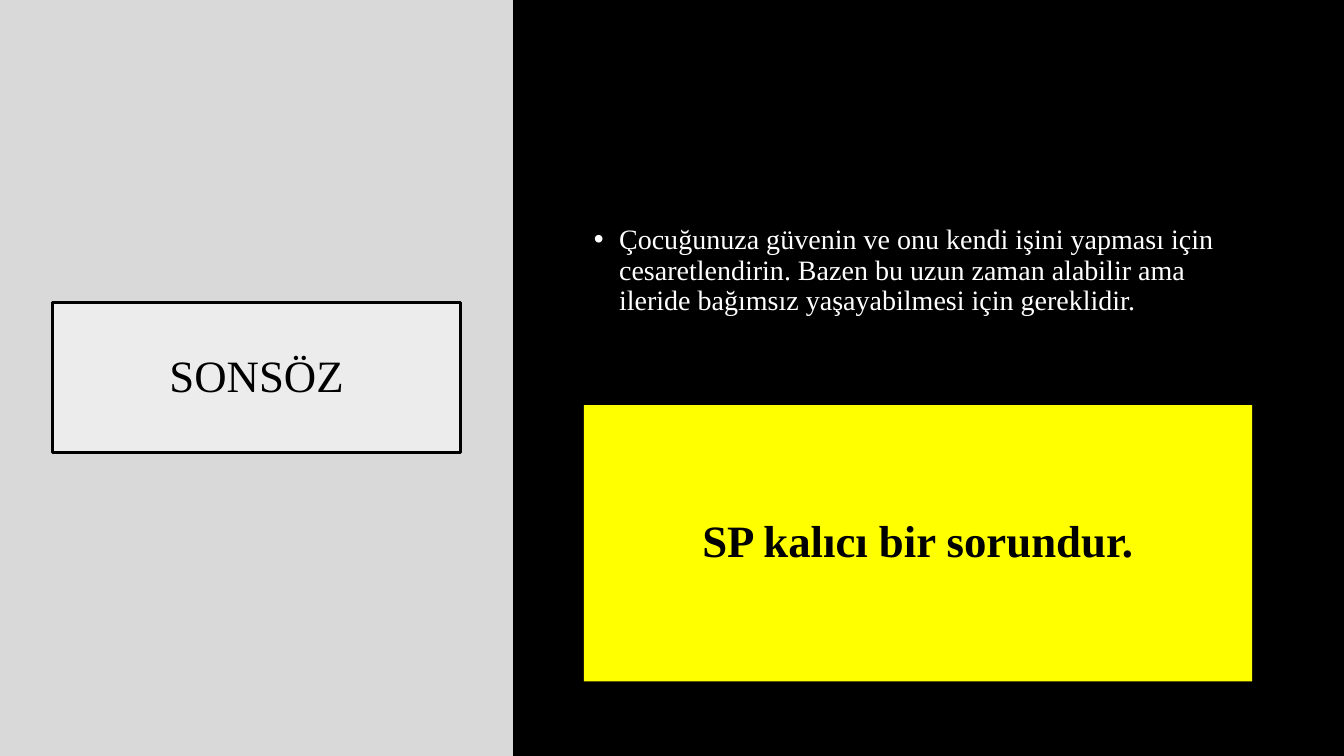
from lxml import etree
from pptx import Presentation
from pptx.dml.color import RGBColor
from pptx.enum import shapes, text
from pptx.oxml import ns
from pptx.util import Inches, Pt

FONT = "Times New Roman"
BLACK, WHITE, GREY, YELLOW = "000000", "FFFFFF", "D9D9D9", "FFFF00"


def paint(fill, colour):
    fill.solid()
    fill.fore_color.rgb = RGBColor.from_string(colour)


def place(box, left, top, width, height):
    box.left, box.top = Inches(left), Inches(top)
    box.width, box.height = Inches(width), Inches(height)


def add_panel(page, left, width, colour):
    """Add a full-height panel behind the placeholders."""
    panel = page.shapes.add_shape(
        shapes.MSO_SHAPE.RECTANGLE, Inches(left), 0, Inches(width), Inches(7.5))
    panel.shadow.inherit = False
    paint(panel.fill, colour)
    panel.line.fill.background()
    page.shapes._spTree.insert(2, panel._element)


def set_bullet(para, bullet):
    """Give the paragraph a hanging bullet, or none."""
    properties = para._p.get_or_add_pPr()
    indent = Inches(0.25) if bullet else 0
    properties.set("marL", str(indent))
    properties.set("indent", str(-indent))
    if bullet:
        etree.SubElement(properties, ns.qn("a:buChar")).set("char", bullet)
    else:
        etree.SubElement(properties, ns.qn("a:buNone"))


def write(box, wording, size, colour, align, anchor, bullet=None, bold=False):
    frame = box.text_frame
    frame.text = wording
    frame.word_wrap = True
    frame.auto_size = text.MSO_AUTO_SIZE.NONE
    frame.vertical_anchor = anchor
    para = frame.paragraphs[0]
    set_bullet(para, bullet)
    para.alignment = align
    para.line_spacing = 0.9
    para.space_before = Pt(0)
    para.font.name = FONT
    para.font.size = Pt(size)
    para.font.bold = bold
    para.font.color.rgb = RGBColor.from_string(colour)


def set_opacity(fill, percent):
    colour = fill._xPr.find(ns.qn("a:solidFill"))[0]
    etree.SubElement(colour, ns.qn("a:alpha")).set("val", str(percent * 1000))


def main():
    deck = Presentation()
    deck.slide_width, deck.slide_height = Inches(13.33), Inches(7.5)
    page = deck.slides.add_slide(deck.slide_layouts.get_by_name("Two Content"))
    paint(page.background.fill, BLACK)
    add_panel(page, 5.09, 8.24, BLACK)
    add_panel(page, 0, 5.09, GREY)
    title, advice, message = page.placeholders
    center, left = text.PP_ALIGN.CENTER, text.PP_ALIGN.LEFT
    middle, bottom = text.MSO_ANCHOR.MIDDLE, text.MSO_ANCHOR.BOTTOM

    place(title, 0.52, 3, 4.05, 1.49)
    paint(title.fill, WHITE)
    set_opacity(title.fill, 50)
    paint(title.line.fill, BLACK)
    title.line.width = Pt(2)
    write(title, "SONSÖZ", 32, BLACK, center, middle)

    place(advice, 5.79, 0.7, 6.62, 2.76)
    write(advice, "Çocuğunuza güvenin ve onu kendi işini yapması için "
          "cesaretlendirin. Bazen bu uzun zaman alabilir ama ileride "
          "bağımsız yaşayabilmesi için gereklidir.",
          20, WHITE, left, bottom, bullet="•")
    advice.text_frame.margin_bottom = Inches(0.32)

    place(message, 5.79, 4.02, 6.63, 2.74)
    paint(message.fill, YELLOW)
    write(message, "SP kalıcı bir sorundur.", 32, BLACK, center, middle, bold=True)

    deck.save("out.pptx")


if __name__ == "__main__":
    main()
